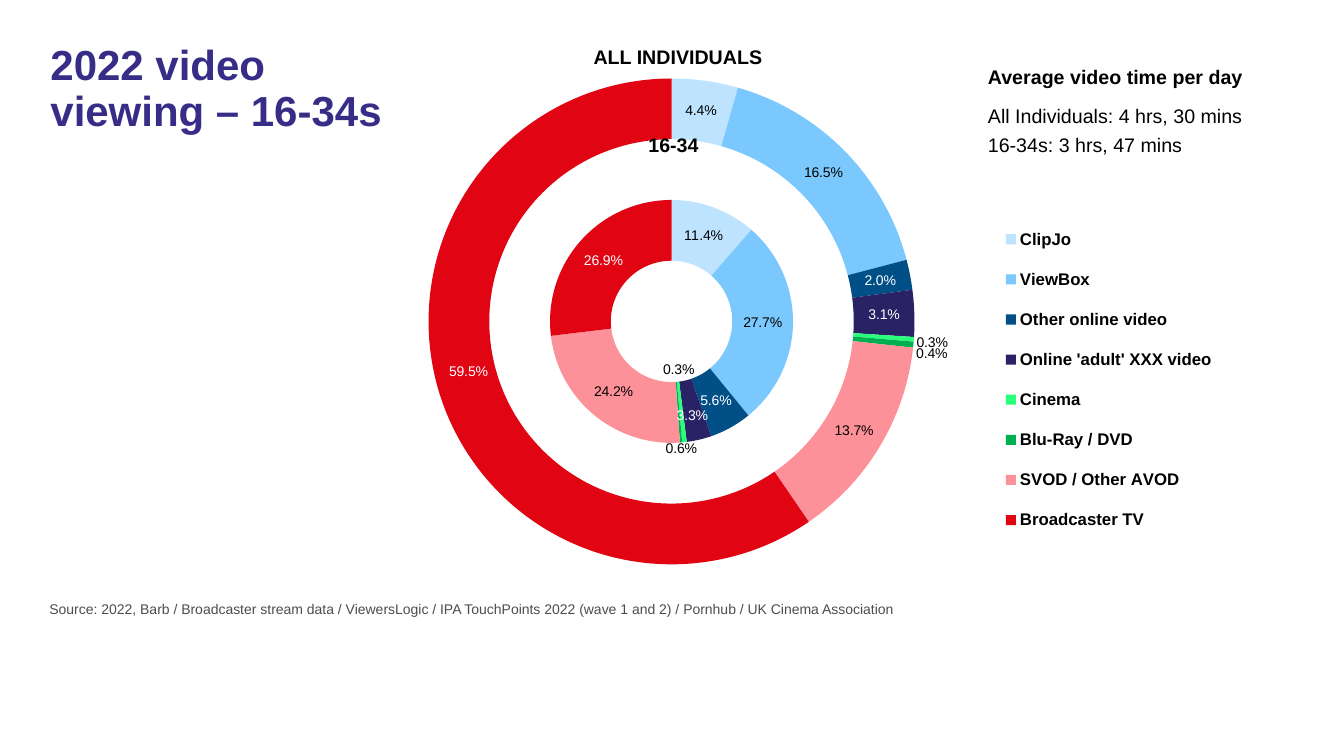
from lxml import etree
from pptx import Presentation
from pptx.chart.data import CategoryChartData
from pptx.dml.color import RGBColor
from pptx.enum.chart import XL_CHART_TYPE, XL_LEGEND_POSITION
from pptx.enum.text import MSO_ANCHOR, MSO_AUTO_SIZE, PP_ALIGN
from pptx.oxml import parse_xml
from pptx.oxml.ns import nsdecls, qn
from pptx.util import Inches, Pt

HUES = {
    "title": "372D87", "text": "000000", "source": "4D4D4D", "light": "FFFFFF",
    "clips": "BDE3FF", "tube": "7BC8FF", "online": "004F87", "adult": "292265",
    "cinema": "2AFF7C", "disc": "00B050", "svod": "FD9199", "tv": "E10514",
}
SHARE = r"0.0\%"

# category, slice colour, label colour
KINDS = [
    ("ClipJo", "clips", "text"),
    ("ViewBox", "tube", "text"),
    ("Other online video", "online", "light"),
    ("Online 'adult' XXX video", "adult", "light"),
    ("Cinema", "cinema", "text"),
    ("Blu-Ray / DVD", "disc", "text"),
    ("SVOD / Other AVOD", "svod", "text"),
    ("Broadcaster TV", "tv", "light"),
]

# ring name, values, label shifts by category index; the empty ring is the gap
RINGS = [
    ("16-34", [11.4, 27.7, 5.6, 3.3, 0.6, 0.3, 24.2, 26.9],
     {3: (0, 0.01), 4: (0, 0.06), 5: (0, -0.07)}),
    ("Gap", [None] * len(KINDS), {}),
    ("All individuals", [4.4, 16.5, 2, 3.1, 0.3, 0.4, 13.7, 59.5],
     {4: (0.05, 0.01), 5: (0.05, 0.02), 7: (0, -0.02)}),
]


def layout(x, y, w=None, h=None, inner=False):
    """Return a manual chart layout; without a size, x and y are shifts."""
    rows = [("layoutTarget", "inner")] if inner else []
    if w:
        rows += [("xMode", "edge"), ("yMode", "edge")]
    rows += [("x", x), ("y", y)]
    if w:
        rows += [("w", w), ("h", h)]
    body = "".join(f'<c:{tag} val="{val}"/>' for tag, val in rows)
    return parse_xml(f'<c:layout {nsdecls("c")}><c:manualLayout>{body}'
                     '</c:manualLayout></c:layout>')


def place(part, frame, index):
    """Swap the layout of a chart part for a new one at the given index."""
    for old in part.findall(qn("c:layout")):
        part.remove(old)
    part.insert(index, frame)


class Board:
    def __init__(self, deck, face="Arial"):
        self.slide = deck.slides.add_slide(deck.slide_layouts[1])
        self.face = face

    def style(self, font, size, hue="text", bold=False):
        font.name, font.size, font.bold = self.face, Pt(size), bold
        font.color.rgb = RGBColor.from_string(HUES[hue])

    def fill(self, shape, box, text, size, hue="text", bold=False,
             align=PP_ALIGN.LEFT):
        shape.left, shape.top, shape.width, shape.height = map(Inches, box)
        frame = shape.text_frame
        frame.word_wrap = True
        frame.auto_size = MSO_AUTO_SIZE.NONE
        frame.vertical_anchor = MSO_ANCHOR.TOP
        para = frame.paragraphs[0]
        para.text, para.alignment = text, align
        para.space_before = Pt(0)
        self.style(para.font, size, hue, bold)
        return para

    def title(self, box, text):
        para = self.fill(self.slide.shapes.title, box, text, 30, "title", True)
        para.line_spacing = 0.9

    def source(self, box, text):
        para = self.fill(self.slide.placeholders[1], box, text, 10, "source")
        props = para._p.get_or_add_pPr()
        props.set("marL", "0")
        props.set("indent", "0")
        props.insert_element_before(
            etree.Element(qn("a:buNone")), "a:tabLst", "a:defRPr", "a:extLst")

    def note(self, box, text, bold=False, align=PP_ALIGN.LEFT):
        shape = self.slide.shapes.add_textbox(*map(Inches, box))
        self.fill(shape, box, text, 14, "text", bold, align)

    def label(self, ring, shifts):
        """Show the share of each slice of a ring."""
        labels = ring.data_labels
        labels.show_value, labels.show_percentage = True, False
        labels.number_format = SHARE
        labels.number_format_is_linked = False
        self.style(labels.font, 10, "light")
        for i, (_, _, hue) in enumerate(KINDS):
            self.style(ring.points[i].data_label.font, 10, hue)
        for i, item in enumerate(labels._element.findall(qn("c:dLbl"))):
            item.insert(1, parse_xml(
                f'<c:numFmt {nsdecls("c")} formatCode="{SHARE}" sourceLinked="0"/>'))
            if i in shifts:
                place(item, layout(*shifts[i]), 1)

    def rings(self, box):
        data = CategoryChartData(number_format="0.0")
        data.categories = [name for name, _, _ in KINDS]
        for name, values, _ in RINGS:
            data.add_series(name, values)
        chart = self.slide.shapes.add_chart(
            XL_CHART_TYPE.DOUGHNUT, *map(Inches, box), data).chart
        chart.has_title = False
        self.style(chart.font, 18)
        plot = chart.plots[0]
        plot.vary_by_categories = True
        plot._element.find(qn("c:holeSize")).set("val", "47")
        for ring, (_, values, shifts) in zip(plot.series, RINGS):
            for i, (_, hue, _) in enumerate(KINDS):
                look = ring.points[i].format
                look.fill.solid()
                look.fill.fore_color.rgb = RGBColor.from_string(HUES[hue])
                look.line.fill.background()
            if any(values):
                self.label(ring, shifts)
        area = chart._chartSpace.chart.plotArea
        place(area, layout(0.11, 0.09, 0.5, 0.81, True), 0)
        chart.has_legend = True
        legend = chart.legend
        legend.position = XL_LEGEND_POSITION.RIGHT
        legend.include_in_layout = False
        self.style(legend.font, 12, bold=True)
        place(legend._element, layout(0.69, 0.31, 0.24, 0.56), 1)


def main():
    deck = Presentation()
    deck.slide_width, deck.slide_height = Inches(13.33), Inches(7.5)
    board = Board(deck)
    board.rings((3.19, 0.18, 9.64, 6.08))
    board.title((0.4, 0.39, 3.82, 2.76), "2022 video viewing – 16-34s")
    board.note((9.7, 0.59, 3.6, 0.34), "Average video time per day", True)
    board.note((9.7, 0.98, 2.99, 0.34), "All Individuals: 4 hrs, 30 mins")
    board.note((9.7, 1.27, 2.27, 0.34), "16-34s: 3 hrs, 47 mins")
    board.note((5.76, 0.4, 1.93, 0.34), "ALL INDIVIDUALS", True, PP_ALIGN.CENTER)
    board.note((6.09, 1.27, 1.18, 0.34), "16-34", True, PP_ALIGN.CENTER)
    board.source(
        (0.39, 5.91, 12.4, 0.33),
        "Source: 2022, Barb / Broadcaster stream data / ViewersLogic / "
        "IPA TouchPoints 2022 (wave 1 and 2) / Pornhub / UK Cinema Association")
    deck.save("out.pptx")


if __name__ == "__main__":
    main()
